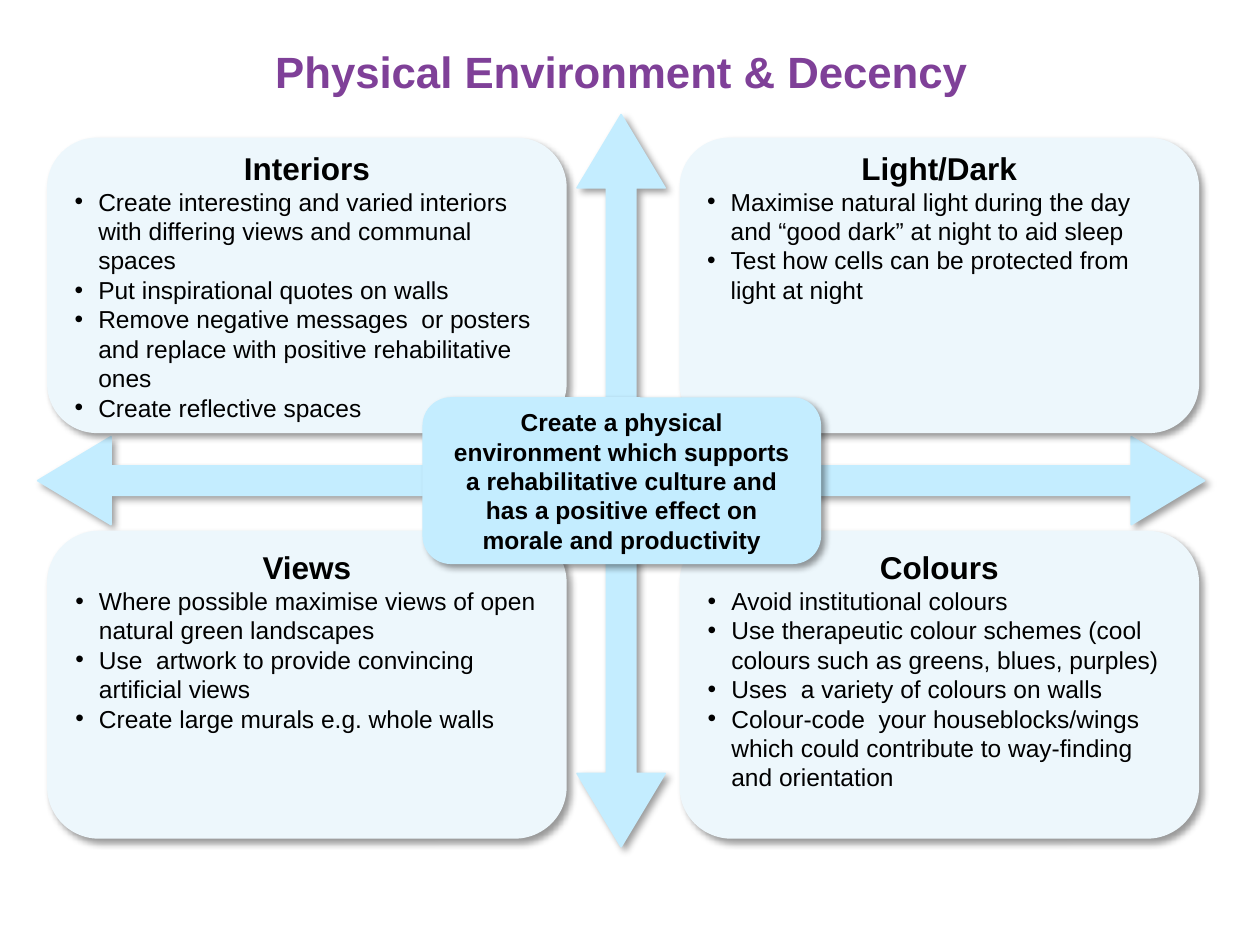
from lxml.etree import SubElement as Sub
from pptx import Presentation
from pptx.dml.color import RGBColor as RGB
from pptx.enum.shapes import MSO_SHAPE as SHAPE
from pptx.enum.text import MSO_ANCHOR as ANCHOR, MSO_AUTO_SIZE as FIT, PP_ALIGN as ALIGN
from pptx.oxml.ns import qn
from pptx.util import Pt

# Content
TITLE = "Physical Environment & Decency"
AIM = ("Create a physical environment which supports a rehabilitative culture "
       "and has a positive effect on morale and productivity")
# column, row, heading, lines the bullets fill, bullets
CARDS = [
    (0, 0, "Interiors", 8, [
        "Create interesting and varied interiors with differing views and communal spaces",
        "Put inspirational quotes on walls",
        "Remove negative messages  or posters and replace with positive rehabilitative ones",
        "Create reflective spaces"]),
    (0, 1, "Views", 5, [
        "Where possible maximise views of open natural green landscapes",
        "Use  artwork to provide convincing artificial views",
        "Create large murals e.g. whole walls"]),
    (1, 0, "Light/Dark", 4, [
        "Maximise natural light during the day and “good dark” at night to aid sleep",
        "Test how cells can be protected from light at night"]),
    (1, 1, "Colours", 7, [
        "Avoid institutional colours",
        "Use therapeutic colour schemes (cool colours such as greens, blues, purples)",
        "Uses  a variety of colours on walls",
        "Colour-code  your houseblocks/wings which could contribute to way-finding and orientation"]),
]
HUES = {"title": "7F4098", "sky": "C4EDFF", "pale": "EDF7FC", "text": "000000"}
FONT = "Arial"

# Layout, in points
COLS, CARD_W = (27.4, 388.8), 295.9
ROWS = ((79.2, 167.8), (303.8, 175))  # top, height
HANG, LINE, MOST, PAD = 13.5, 16.8, 8, 3.6


def hue(name):
    return RGB.from_string(HUES[name])


def write(par, text, size, bold=False, tint="text", align=ALIGN.CENTER):
    par.alignment = align
    run = par.add_run()
    run.text = text
    font = run.font
    font.name, font.size, font.bold = FONT, Pt(size), bold
    font.color.rgb = hue(tint)


def bullet(par):
    props = par._p.get_or_add_pPr()
    props.set("marL", str(Pt(HANG)))
    props.set("indent", str(-Pt(HANG)))
    Sub(props, qn("a:buFont"), typeface=FONT)
    Sub(props, qn("a:buChar"), char="•")


def panel(slide, kind, box, tint):
    shape = slide.shapes.add_shape(kind, *map(Pt, box))
    shape.fill.solid()
    shape.fill.fore_color.rgb = hue(tint)
    shape.line.color.rgb = hue(tint)
    shape.line.width = Pt(1)
    # Soft shadow to the lower right
    shape.shadow.inherit = False
    glow = Sub(shape._element.spPr.find(qn("a:effectLst")), qn("a:outerShdw"),
               blurRad=str(Pt(4)), dist=str(Pt(3)), dir="2700000",
               algn="tl", rotWithShape="0")
    Sub(Sub(glow, qn("a:srgbClr"), val=HUES["text"]), qn("a:alpha"), val="40000")
    frame = shape.text_frame
    frame.word_wrap = True
    frame.vertical_anchor = ANCHOR.MIDDLE
    return shape


def main():
    deck = Presentation()
    deck.slide_width, deck.slide_height = Pt(720), Pt(540)
    slide = deck.slides.add_slide(deck.slide_layouts[5])

    # Title
    title = slide.shapes.title
    title.left, title.top, title.width, title.height = map(Pt, (21.6, 25.2, 666.7, 40.3))
    frame = title.text_frame
    frame.auto_size, frame.vertical_anchor = FIT.NONE, ANCHOR.TOP
    frame.paragraphs[0].line_spacing = 0.9
    write(frame.paragraphs[0], TITLE, 25, True, "title")

    # Four-way arrow
    cross = panel(slide, SHAPE.QUAD_ARROW, (21.6, 65.5, 666.7, 418.3), "sky")
    for i, part in enumerate((0.04, 0.06, 0.1)):
        cross.adjustments[i] = part

    # Cards: bottom padding keeps the headings of a row level
    for col, row, head, lines, points in CARDS:
        top, high = ROWS[row]
        card = panel(slide, SHAPE.ROUNDED_RECTANGLE, (COLS[col], top, CARD_W, high), "pale")
        frame = card.text_frame
        frame.margin_bottom = Pt(PAD + LINE * (MOST - lines))
        write(frame.paragraphs[0], head, 18, True)
        for point in points:
            par = frame.add_paragraph()
            bullet(par)
            write(par, point, 14, align=ALIGN.LEFT)

    # Central aim
    hub = panel(slide, SHAPE.ROUNDED_RECTANGLE, (241.9, 227.5, 226.8, 94.3), "sky")
    write(hub.text_frame.paragraphs[0], AIM, 14, True)

    deck.save("out.pptx")


if __name__ == "__main__":
    main()
